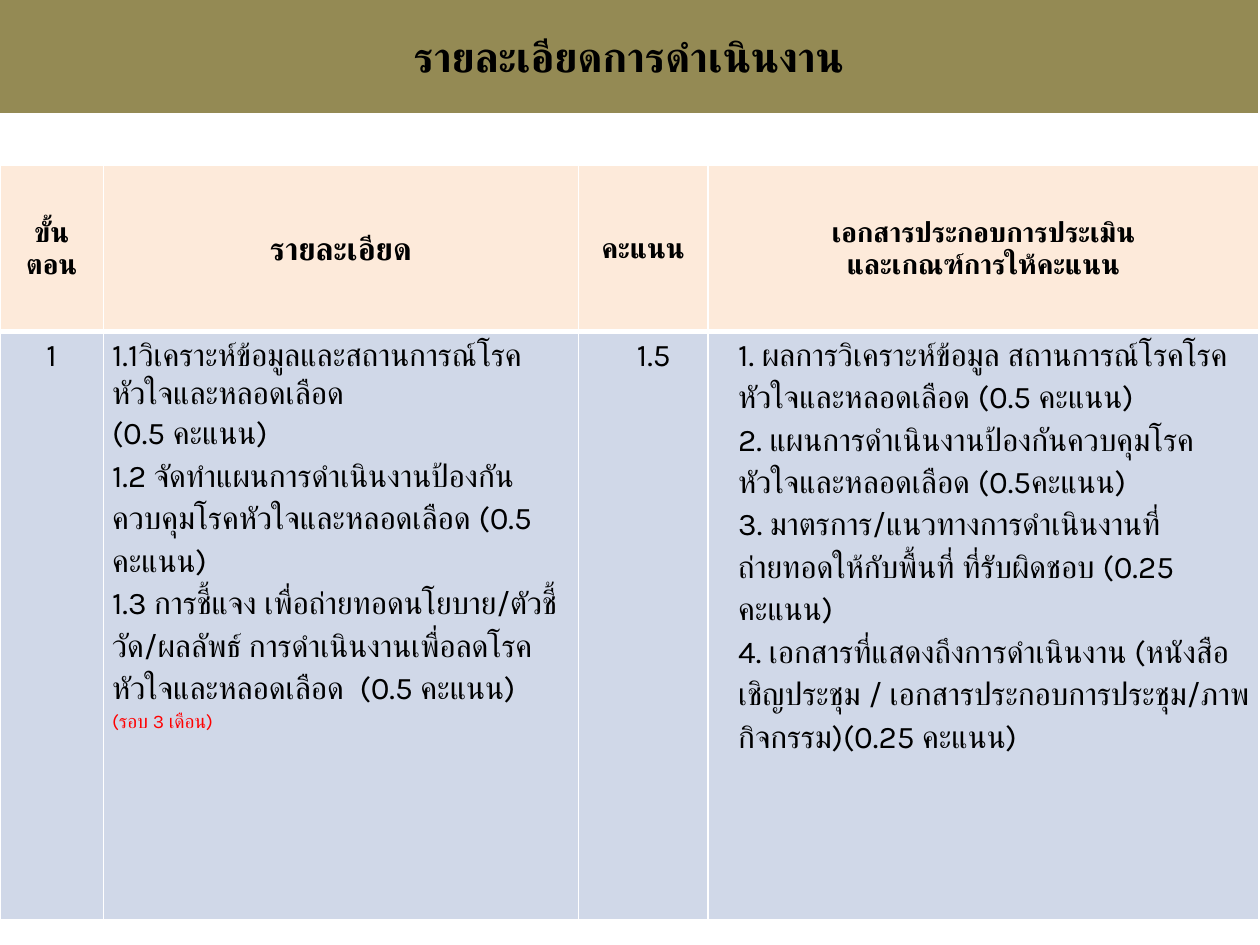
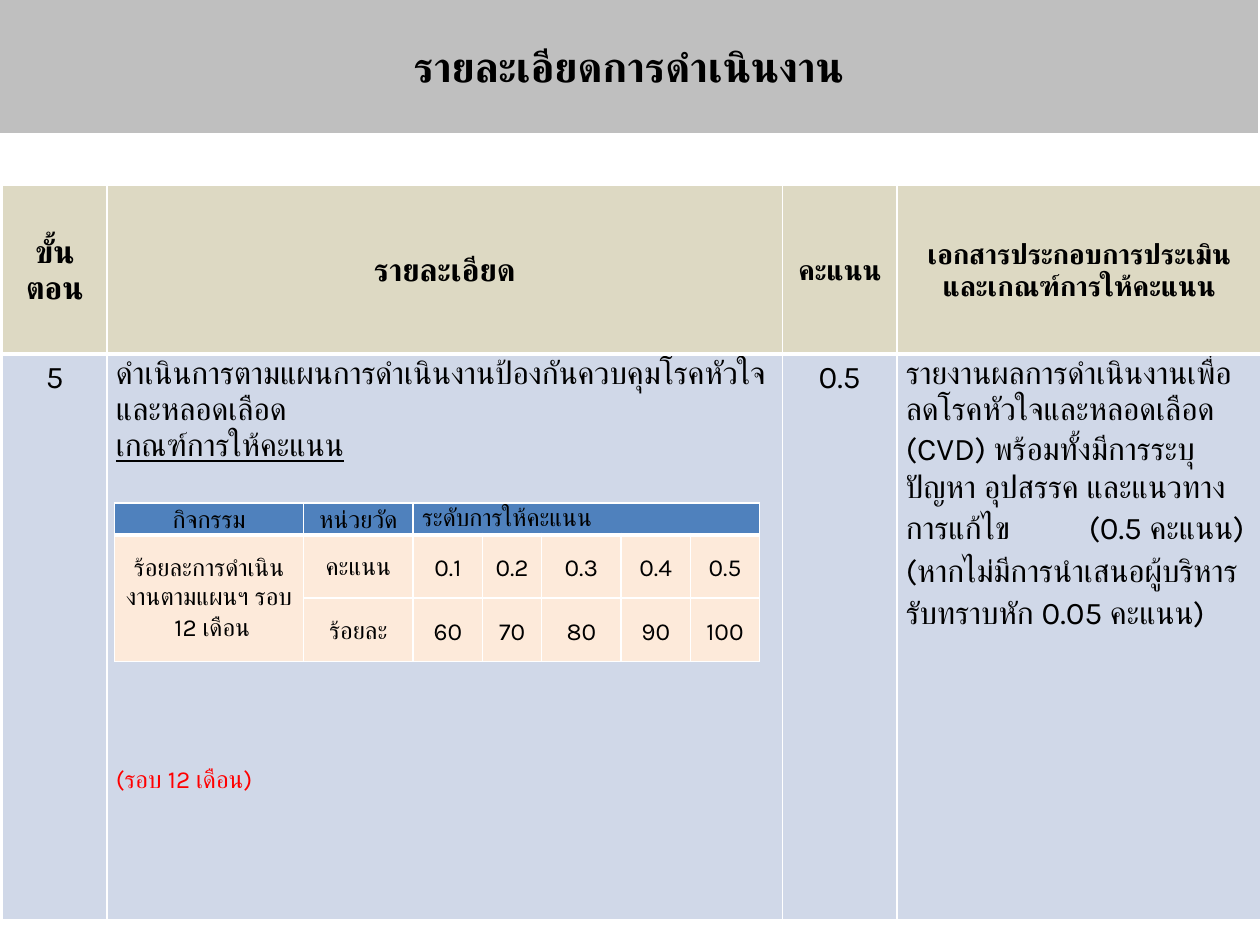
from dataclasses import dataclass

from lxml.etree import SubElement
from pptx import Presentation
from pptx.dml.color import RGBColor
from pptx.enum.text import MSO_ANCHOR, MSO_AUTO_SIZE, PP_ALIGN
from pptx.oxml.ns import qn
from pptx.util import Emu, Inches, Pt

FONT = "Karla"
BLACK, WHITE, RED = "000000", "FFFFFF", "FF0000"
PEACH, SAND, PALE_BLUE, BLUE = "FDEADA", "DDD9C3", "D0D8E8", "4F81BD"
OLIVE, GREY = "948A54", "BFBFBF"
SLIDE_WIDTH, SLIDE_HEIGHT = Inches(10), Inches(7.5)
TITLE = "รายละเอียดการดำเนินงาน"
DOCUMENTS = ("เอกสารประกอบการประเมิน", "และเกณฑ์การให้คะแนน")


@dataclass(frozen=True)
class Line:
    """One paragraph of a table cell."""
    text: str
    size: float = 18
    color: str = BLACK
    bold: bool = False
    underline: bool = False
    centred: bool = False
    indent: float = 0
    space_before: float = 0
    spacing: float = 1.15


@dataclass(frozen=True)
class CellBox:
    lines: tuple[Line, ...]
    fill: str = PALE_BLUE
    middle: bool = False
    row_span: int = 1
    column_span: int = 1


@dataclass(frozen=True)
class Grid:
    """Left, top, columns and rows are percentages of the slide's size."""
    left: float
    top: float
    columns: tuple[float, ...]
    rows: tuple[float, ...]
    cells: tuple[tuple[CellBox | None, ...], ...]


@dataclass(frozen=True)
class Page:
    band_color: str
    band_height: float
    grids: tuple[Grid, ...]


def across(percent: float) -> Emu:
    return Emu(round(SLIDE_WIDTH * percent / 100))


def down(percent: float) -> Emu:
    return Emu(round(SLIDE_HEIGHT * percent / 100))


def rgb(color: str) -> RGBColor:
    return RGBColor.from_string(color)


def set_all(target, values: dict) -> None:
    for name, value in values.items():
        setattr(target, name, value)


def heading(*texts: str, size: float = 16, fill: str) -> CellBox:
    return CellBox(tuple(Line(text, size, bold=True, centred=True) for text in texts), fill, True)


def number(text: str, indent: float = 0) -> CellBox:
    return CellBox((Line(text, centred=True, indent=indent),))


def score(text: str, fill: str = PEACH, row_span: int = 1) -> CellBox:
    return CellBox((Line(text, 14, centred=True),), fill, True, row_span)


def add_span(paragraph, text: str, size: float, color: str, bold: bool,
             underline: bool = False) -> None:
    span = paragraph.add_run()
    span.text = text
    set_all(span.font, {"name": FONT, "size": Pt(size), "bold": bold, "underline": underline})
    span.font.color.rgb = rgb(color)


def write_lines(frame, lines: tuple[Line, ...]) -> None:
    for position, line in enumerate(lines):
        para = frame.paragraphs[0] if position == 0 else frame.add_paragraph()
        set_all(para, {
            "alignment": PP_ALIGN.CENTER if line.centred else PP_ALIGN.LEFT,
            "line_spacing": line.spacing,
            "space_before": Pt(line.space_before),
        })
        if line.indent:
            para._p.get_or_add_pPr().set("marL", str(Inches(line.indent)))
        add_span(para, line.text, line.size, line.color, line.bold, line.underline)


def add_borders(cell, is_header: bool) -> None:
    """White cell edges, with a thick rule under the header row."""
    widths = {"lnL": 1, "lnR": 1, "lnT": 1, "lnB": 3} if is_header else {"lnL": 1, "lnR": 1, "lnB": 1}
    properties = cell._tc.get_or_add_tcPr()
    for edge, width in widths.items():
        border = SubElement(properties, qn(f"a:{edge}"), w=str(Pt(width)))
        SubElement(SubElement(border, qn("a:solidFill")), qn("a:srgbClr"), val=WHITE)


def draw_grid(slide, grid: Grid) -> None:
    table = slide.shapes.add_table(
        len(grid.rows), len(grid.columns), across(grid.left), down(grid.top),
        across(sum(grid.columns)), down(sum(grid.rows))).table
    table.horz_banding = False
    for column, width in zip(table.columns, grid.columns):
        column.width = across(width)
    for row, height in zip(table.rows, grid.rows):
        row.height = down(height)
    for row_index, boxes in enumerate(grid.cells):
        for column_index, box in enumerate(boxes):
            cell = table.cell(row_index, column_index)
            add_borders(cell, row_index == 0)
            if box is None:
                continue
            if box.row_span * box.column_span > 1:
                cell.merge(table.cell(row_index + box.row_span - 1,
                                      column_index + box.column_span - 1))
            set_all(cell, {
                "margin_left": Inches(0.07), "margin_right": Inches(0.07),
                "margin_top": 0, "margin_bottom": 0,
                "vertical_anchor": MSO_ANCHOR.MIDDLE if box.middle else MSO_ANCHOR.TOP,
            })
            cell.fill.solid()
            cell.fill.fore_color.rgb = rgb(box.fill)
            write_lines(cell.text_frame, box.lines)


def draw_title_band(slide, color: str, height: float) -> None:
    band = slide.shapes.title
    set_all(band, {"left": across(-0.2), "top": down(-0.4),
                   "width": across(100.2), "height": down(height)})
    band.fill.solid()
    band.fill.fore_color.rgb = rgb(color)
    band.line.color.rgb = rgb(WHITE)
    band.line.width = Pt(2)
    set_all(band.text_frame, {"word_wrap": True, "auto_size": MSO_AUTO_SIZE.NONE,
                              "vertical_anchor": MSO_ANCHOR.MIDDLE})
    para = band.text_frame.paragraphs[0]
    para.alignment = PP_ALIGN.CENTER
    add_span(para, TITLE, 24, BLACK, True)


STEP_ONE = Grid(
    0, 17.5, (8.2, 37.7, 10.3, 43.7), (17.6, 62.2),
    ((heading("ขั้น ตอน", fill=PEACH),
      heading("รายละเอียด", size=18, fill=PEACH),
      heading("คะแนน", fill=PEACH),
      heading(*DOCUMENTS, fill=PEACH)),
     (number("1"),
      CellBox((
          Line("1.1วิเคราะห์ข้อมูลและสถานการณ์โรคหัวใจและหลอดเลือด"),
          Line("(0.5 คะแนน)"),
          Line("1.2 จัดทำแผนการดำเนินงานป้องกันควบคุมโรคหัวใจและหลอดเลือด (0.5 คะแนน)"),
          Line("1.3 การชี้แจง เพื่อถ่ายทอดนโยบาย/ตัวชี้วัด/ผลลัพธ์ "
               "การดำเนินงานเพื่อลดโรคหัวใจและหลอดเลือด  (0.5 คะแนน)"),
          Line("(รอบ 3 เดือน)", 11, RED))),
      number("1.5", indent=0.17),
      CellBox(tuple(Line(text, indent=0.17) for text in (
          "1. ผลการวิเคราะห์ข้อมูล สถานการณ์โรคโรคหัวใจและหลอดเลือด (0.5 คะแนน)",
          "2. แผนการดำเนินงานป้องกันควบคุมโรคหัวใจและหลอดเลือด (0.5คะแนน)",
          "3. มาตรการ/แนวทางการดำเนินงานที่ถ่ายทอดให้กับพื้นที่ ที่รับผิดชอบ (0.25 คะแนน)",
          "4. เอกสารที่แสดงถึงการดำเนินงาน (หนังสือเชิญประชุม / "
          "เอกสารประกอบการประชุม/ภาพกิจกรรม)(0.25 คะแนน)"))))))

STEP_FIVE = Grid(
    0.2, 19.6, (8.3, 53.6, 9.1, 28.9), (17.87, 59.87),
    ((heading("ขั้น", "ตอน", size=18, fill=SAND),
      heading("รายละเอียด", size=18, fill=SAND),
      heading("คะแนน", fill=SAND),
      heading(*DOCUMENTS, fill=SAND)),
     (number("5"),
      CellBox((
          Line("ดำเนินการตามแผนการดำเนินงานป้องกันควบคุมโรคหัวใจและหลอดเลือด"),
          Line("เกณฑ์การให้คะแนน", underline=True),
          Line("(รอบ 12 เดือน)", 14, RED, space_before=171))),
      number("0.5"),
      CellBox((Line(
          "รายงานผลการดำเนินงานเพื่อลดโรคหัวใจและหลอดเลือด (CVD) "
          "พร้อมทั้งมีการระบุปัญหา อุปสรรค และแนวทางการแก้ไข          (0.5 คะแนน)"
          "(หากไม่มีการนำเสนอผู้บริหารรับทราบหัก 0.05 คะแนน)"),)))))

SCORING = Grid(
    9.1, 53.2, (15, 8.7, 5.5, 4.7, 6.3, 5.5, 5.5), (3.4, 6.7, 6.7),
    ((score("กิจกรรม", BLUE), score("หน่วยวัด", BLUE),
      CellBox((Line("ระดับการให้คะแนน", 14, spacing=1),), BLUE, True, column_span=5),
      None, None, None, None),
     (score("ร้อยละการดำเนินงานตามแผนฯ รอบ  12 เดือน", row_span=2),
      *map(score, ("คะแนน", "0.1", "0.2", "0.3", "0.4", "0.5"))),
     (None, *map(score, ("ร้อยละ", "60", "70", "80", "90", "100")))))

PAGES = (Page(OLIVE, 12.53, (STEP_ONE,)), Page(GREY, 14.67, (STEP_FIVE, SCORING)))


def main() -> None:
    deck = Presentation()
    set_all(deck, {"slide_width": SLIDE_WIDTH, "slide_height": SLIDE_HEIGHT})
    title_only = deck.slide_layouts.get_by_name("Title Only")
    for page in PAGES:
        slide = deck.slides.add_slide(title_only)
        draw_title_band(slide, page.band_color, page.band_height)
        for grid in page.grids:
            draw_grid(slide, grid)
    deck.save("out.pptx")


if __name__ == "__main__":
    main()
